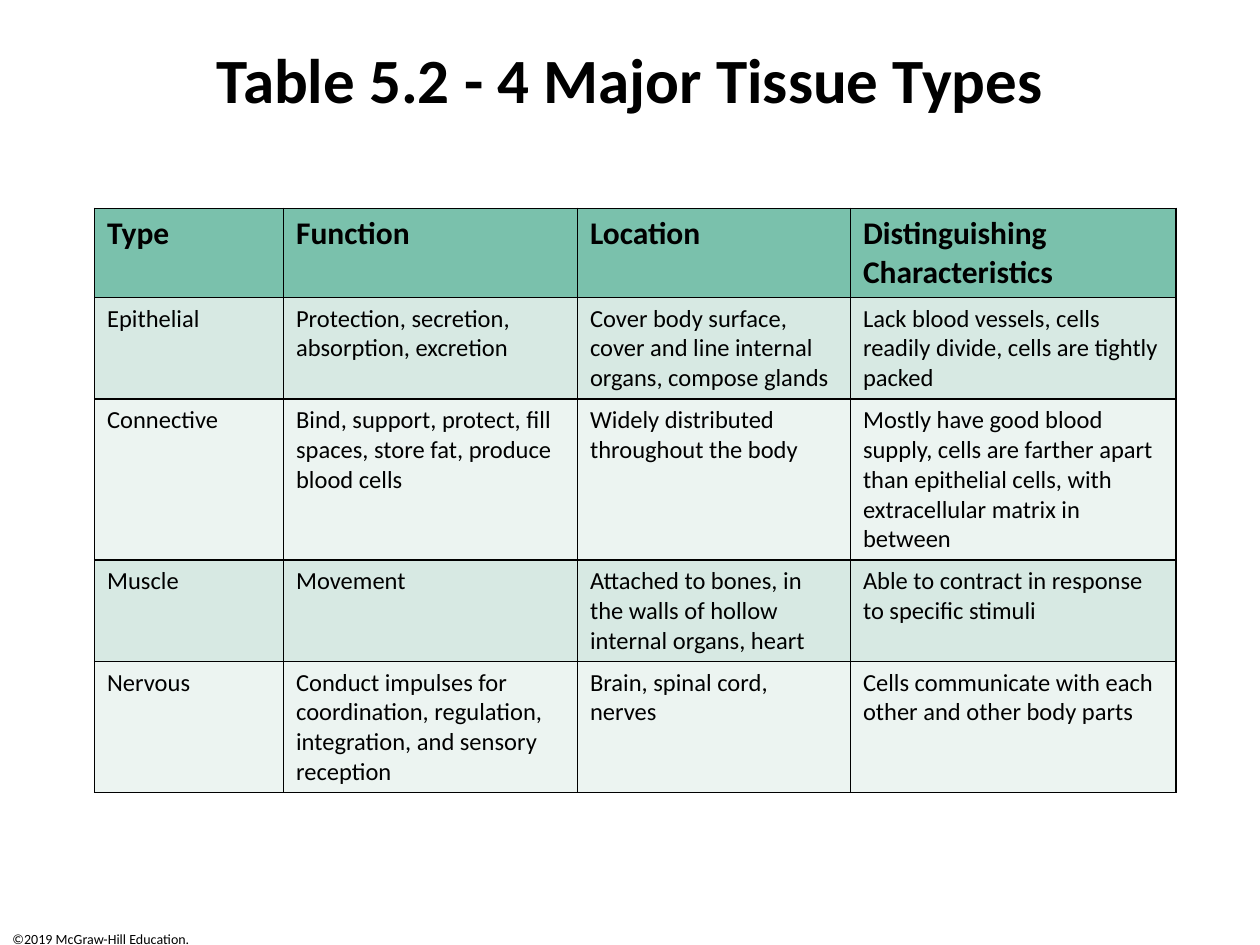
"""Build the slide with the table of the four major tissue types."""
import lxml.etree
import pptx
import pptx.dml.color
import pptx.enum.text
import pptx.oxml.ns
import pptx.util

COLORS = {
    "text": "000000",
    "border": "000000",
    "header": "7AC1AC",
    "odd_row": "D7E9E3",
    "even_row": "ECF4F1",
}
FONT = "Calibri"
COLUMN_WIDTHS = [108, 168, 156, 186]
ROW_HEIGHTS = [51, 58, 92, 58, 75]
TISSUE_ROWS = [
    ["Type", "Function", "Location", "Distinguishing Characteristics"],
    [
        "Epithelial",
        "Protection, secretion, absorption, excretion",
        "Cover body surface, cover and line internal organs, compose glands",
        "Lack blood vessels, cells readily divide, cells are tightly packed",
    ],
    [
        "Connective",
        "Bind, support, protect, fill spaces, store fat, produce blood cells",
        "Widely distributed throughout the body",
        "Mostly have good blood supply, cells are farther apart than "
        "epithelial cells, with extracellular matrix in between",
    ],
    [
        "Muscle",
        "Movement",
        "Attached to bones, in the walls of hollow internal organs, heart",
        "Able to contract in response to specific stimuli",
    ],
    [
        "Nervous",
        "Conduct impulses for coordination, regulation, integration, "
        "and sensory reception",
        "Brain, spinal cord, nerves",
        "Cells communicate with each other and other body parts",
    ],
]


def points(*lengths):
    return [pptx.util.Pt(length) for length in lengths]


def rgb(name):
    return pptx.dml.color.RGBColor.from_string(COLORS[name])


def write_text(frame, text, size, bold=False):
    frame.text = text
    frame.word_wrap = True
    paragraph = frame.paragraphs[0]
    paragraph.font.name = FONT
    paragraph.font.size = pptx.util.Pt(size)
    paragraph.font.bold = bold
    paragraph.font.color.rgb = rgb("text")
    return paragraph


def add_title(slide, text):
    title = slide.shapes.title
    title.left, title.top, title.width, title.height = points(36, 18, 648, 48)
    frame = title.text_frame
    frame.auto_size = pptx.enum.text.MSO_AUTO_SIZE.NONE
    frame.vertical_anchor = pptx.enum.text.MSO_ANCHOR.TOP
    frame.margin_top = pptx.util.Pt(5)
    heading = write_text(frame, text, 36, bold=True)
    heading.alignment = pptx.enum.text.PP_ALIGN.CENTER


def add_copyright(slide, text):
    notice = slide.shapes.add_textbox(*points(0, 528, 120, 12))
    write_text(notice.text_frame, text, 8)


def add_borders(cell):
    qn = pptx.oxml.ns.qn
    properties = cell._tc.get_or_add_tcPr()
    for side in ("a:lnL", "a:lnR", "a:lnT", "a:lnB"):
        border = lxml.etree.SubElement(
            properties, qn(side), w=str(pptx.util.Pt(1)))
        fill = lxml.etree.SubElement(border, qn("a:solidFill"))
        lxml.etree.SubElement(fill, qn("a:srgbClr"), val=COLORS["border"])


def row_color(row):
    if row == 0:
        return "header"
    return "odd_row" if row % 2 else "even_row"


def add_tissue_table(slide):
    table = slide.shapes.add_table(
        len(ROW_HEIGHTS), len(COLUMN_WIDTHS),
        *points(54, 119, sum(COLUMN_WIDTHS), sum(ROW_HEIGHTS))).table
    for column, width in zip(table.columns, points(*COLUMN_WIDTHS)):
        column.width = width
    for row, height in zip(table.rows, points(*ROW_HEIGHTS)):
        row.height = height
    for row, entries in enumerate(TISSUE_ROWS):
        is_header = row == 0
        for column, entry in enumerate(entries):
            cell = table.cell(row, column)
            write_text(cell.text_frame, entry, 18 if is_header else 14, is_header)
            add_borders(cell)
            cell.fill.solid()
            cell.fill.fore_color.rgb = rgb(row_color(row))


def main():
    presentation = pptx.Presentation()
    presentation.slide_width, presentation.slide_height = points(720, 540)
    slide = presentation.slides.add_slide(presentation.slide_layouts[5])
    add_copyright(slide, "©2019 McGraw-Hill Education.")
    add_title(slide, "Table 5.2 - 4 Major Tissue Types")
    add_tissue_table(slide)
    presentation.save("out.pptx")


if __name__ == "__main__":
    main()
